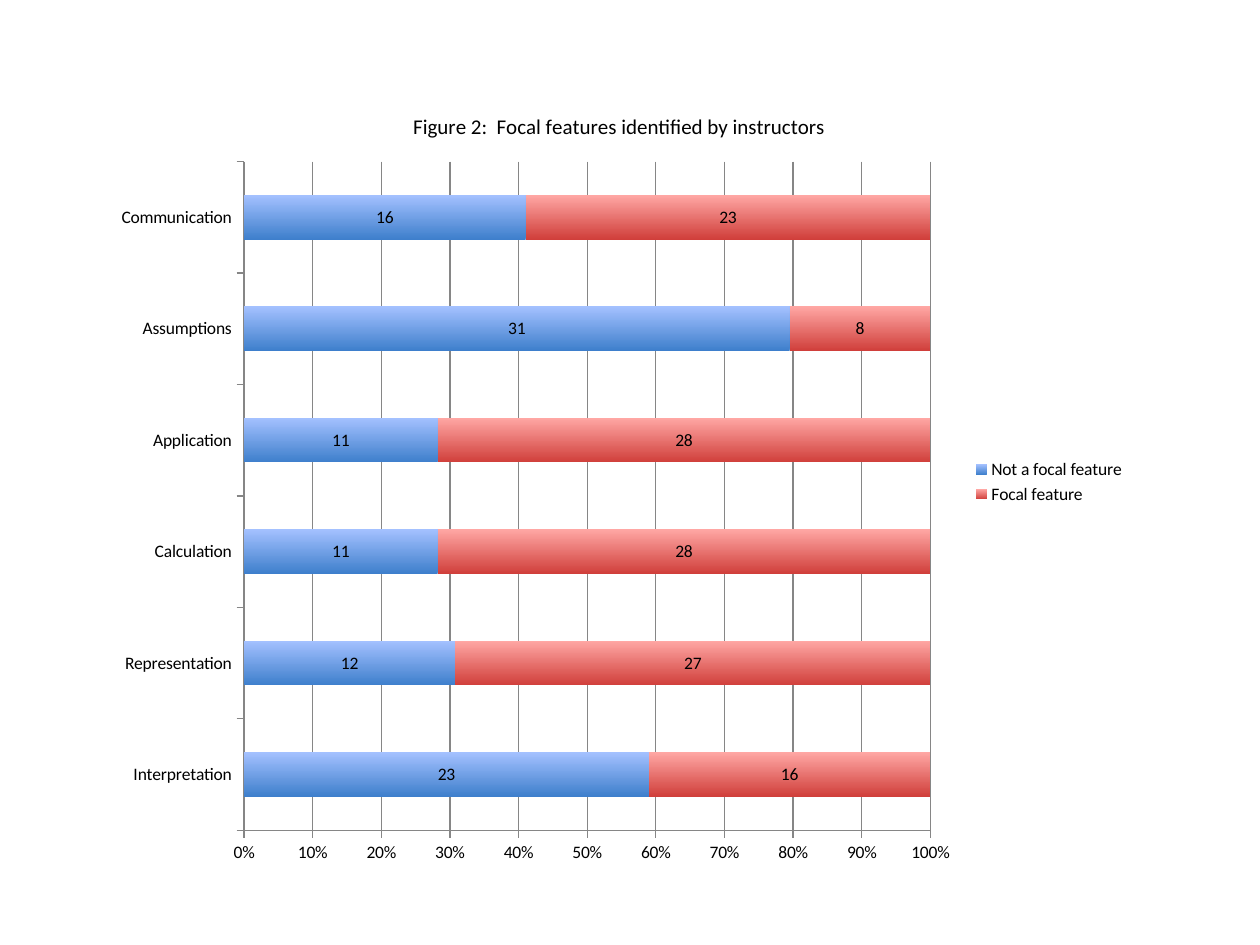
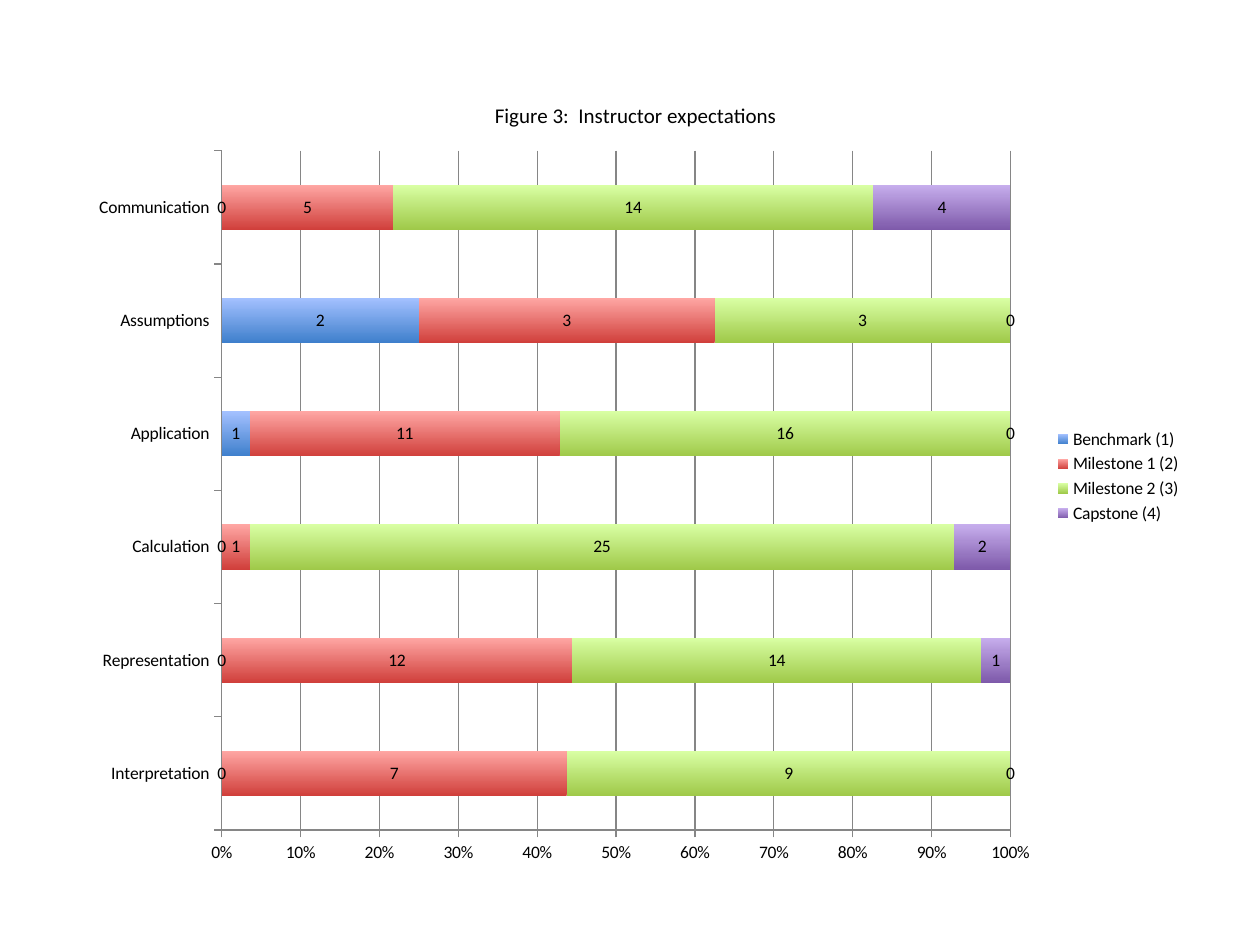
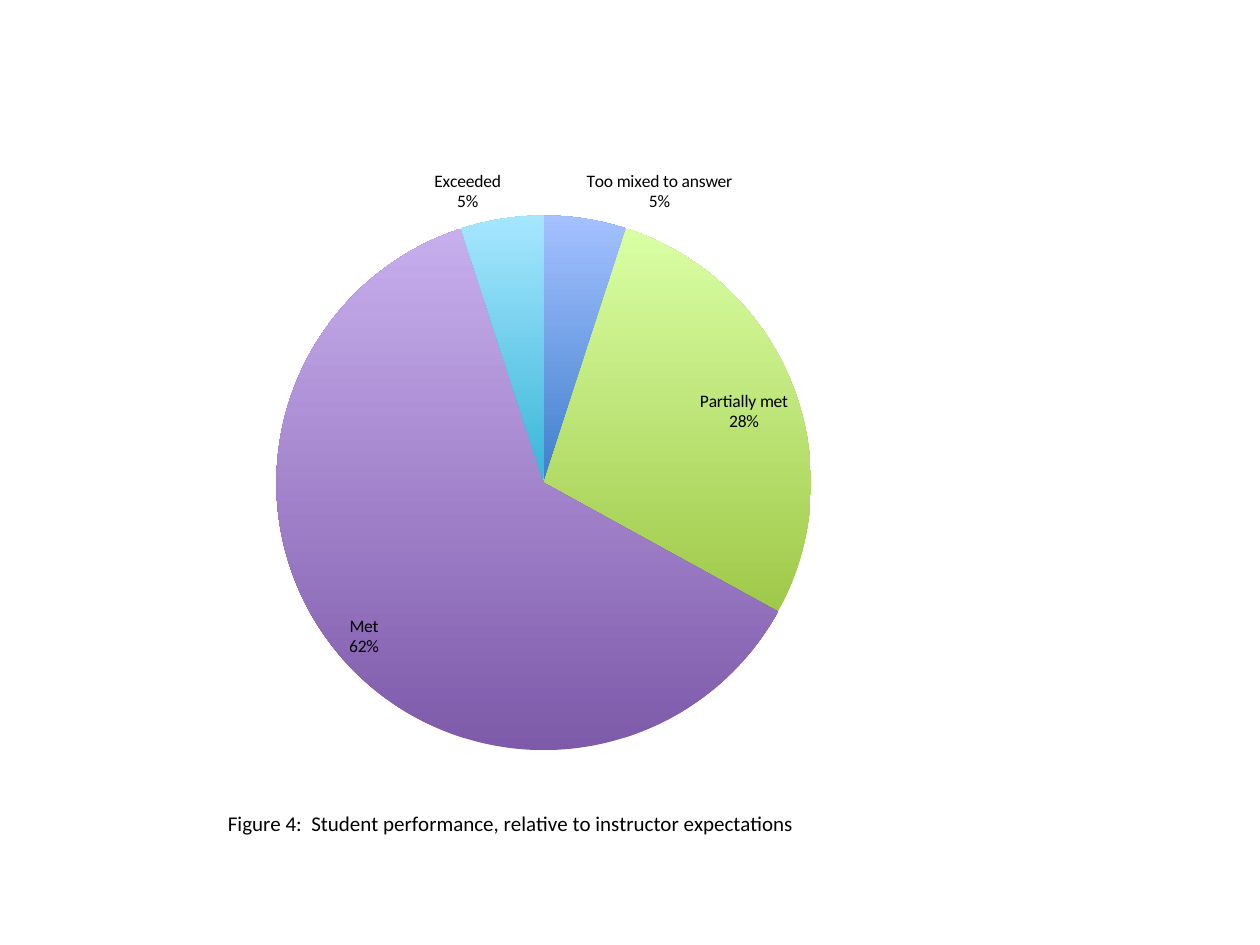
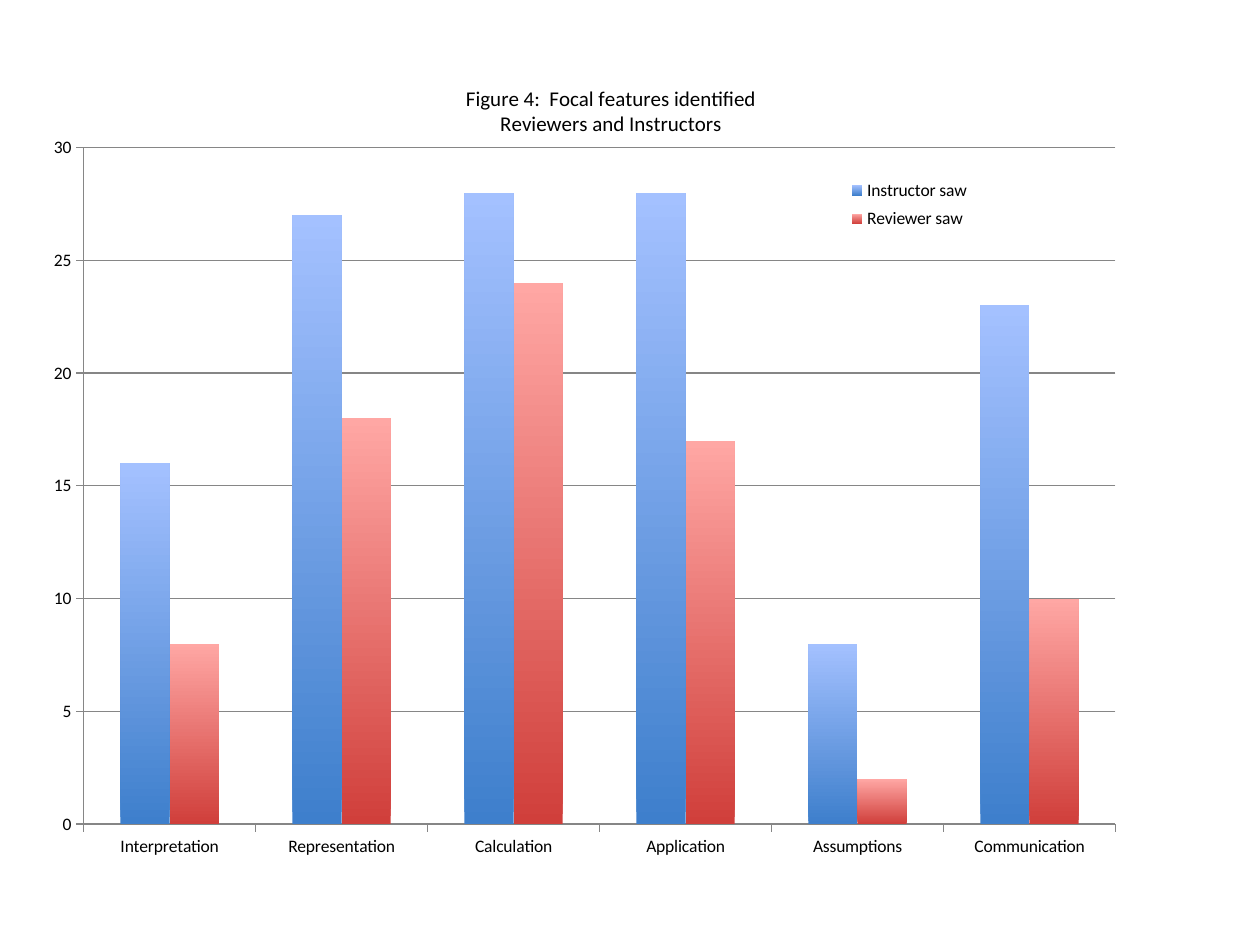
from dataclasses import dataclass
from typing import Optional

from lxml.etree import SubElement
from pptx import Presentation
from pptx.chart.chart import Chart
from pptx.chart.data import CategoryChartData
from pptx.dml.color import RGBColor
from pptx.enum.chart import XL_CHART_TYPE as ChartType
from pptx.enum.chart import XL_LABEL_POSITION as LabelPosition
from pptx.enum.chart import XL_LEGEND_POSITION as LegendPosition
from pptx.enum.chart import XL_TICK_MARK as TickMark
from pptx.oxml import parse_xml
from pptx.oxml.ns import nsdecls, qn
from pptx.util import Inches, Pt

# Shared look
BLACK = RGBColor(0x00, 0x00, 0x00)
GREY = RGBColor(0x86, 0x86, 0x86)
FONT = "Calibri"
TEXT_SIZE = Pt(10)
TITLE_SIZE = Pt(12)
GRADIENT_STYLE = 18  # accent colours with the theme's gradient fill
BLANK_LAYOUT = 6

FEATURES = ("Interpretation", "Representation", "Calculation",
            "Application", "Assumptions", "Communication")
INSTRUCTOR_SAW = (16, 27, 28, 28, 8, 23)

Box = tuple[float, ...]


@dataclass(frozen=True)
class Figure:
    title: str
    kind: ChartType
    box: Box  # left, top, width, height in inches
    categories: tuple[str, ...]
    series: dict[str, tuple[int, ...]]
    # Fractions of the chart: x, y and, where needed, width and height
    plot_area: Optional[Box] = None
    title_area: Optional[Box] = None
    legend_area: Optional[Box] = None


FIGURES = (
    Figure("Figure 2:  Focal features identified by instructors",
           ChartType.BAR_STACKED_100, (0.8, 0.68, 8.23, 6.29), FEATURES,
           {"Not a focal feature": (23, 12, 11, 11, 31, 16),
            "Focal feature": INSTRUCTOR_SAW}),
    Figure("Figure 3:  Instructor expectations",
           ChartType.BAR_STACKED_100, (0.61, 0.59, 8.87, 6.38), FEATURES,
           {"Benchmark (1)": (0, 0, 0, 1, 2, 0),
            "Milestone 1 (2)": (7, 12, 1, 11, 3, 5),
            "Milestone 2 (3)": (9, 14, 25, 16, 3, 14),
            "Capstone (4)": (0, 1, 2, 0, 0, 4)}),
    Figure("Figure 4:  Student performance, relative to instructor expectations",
           ChartType.PIE, (0.78, 0.51, 8.32, 6.39),
           ("Too mixed to answer", "Did not meet", "Partially met", "Met", "Exceeded"),
           {"Series 1": (5, 0, 28, 62, 5)},
           plot_area=(0.17, 0.17, 0.51, 0.7), title_area=(0.12, 0.92)),
    Figure("Figure 4:  Focal features identified\nReviewers and Instructors",
           ChartType.COLUMN_CLUSTERED, (0.3, 0.46, 9.1, 6.47), FEATURES,
           {"Instructor saw": INSTRUCTOR_SAW,
            "Reviewer saw": (8, 18, 24, 17, 2, 10)},
           plot_area=(0.04, 0.11, 0.9, 0.83), legend_area=(0.69, 0.14, 0.14, 0.08)),
)


def style_font(font, size: Pt = TEXT_SIZE) -> None:
    font.name, font.size, font.bold = FONT, size, False
    font.color.rgb = BLACK


def place(element, area: Optional[Box], index: int, inner: bool = False) -> None:
    """Give a chart part a manual layout, as fractions of the chart."""
    if area is None:
        return
    for layout in element.findall(qn("c:layout")):
        element.remove(layout)
    layout = parse_xml(f"<c:layout {nsdecls('c')}><c:manualLayout/></c:layout>")
    settings = [("layoutTarget", "inner")] if inner else []
    settings += [("xMode", "edge"), ("yMode", "edge"), *zip("xywh", area)]
    for name, value in settings:
        SubElement(layout[0], qn(f"c:{name}")).set("val", str(value))
    element.insert(index, layout)


def add_title(chart: Chart, figure: Figure) -> None:
    chart.has_title = True
    title = chart.chart_title
    title.text_frame.text = figure.title
    title.include_in_layout = False
    for paragraph in title.text_frame.paragraphs:
        for run in paragraph.runs:
            style_font(run.font, TITLE_SIZE)
    place(title._element, figure.title_area, 1)


def add_legend(chart: Chart, figure: Figure) -> None:
    chart.has_legend = True
    legend = chart.legend
    legend.position = LegendPosition.RIGHT
    legend.include_in_layout = False
    style_font(legend.font)
    place(legend._element, figure.legend_area, 1)


def style_axes(chart: Chart, stacked: bool) -> None:
    for axis in (chart.category_axis, chart.value_axis):
        axis.major_tick_mark, axis.minor_tick_mark = TickMark.OUTSIDE, TickMark.NONE
        axis.format.line.color.rgb = GREY
        style_font(axis.tick_labels.font)
    value_axis = chart.value_axis
    value_axis.has_major_gridlines = True
    value_axis.major_gridlines.format.line.color.rgb = GREY
    value_axis.minimum_scale = 0
    value_axis.maximum_scale, value_axis.major_unit = (1, 0.1) if stacked else (30, 5)
    labels = value_axis.tick_labels
    labels.number_format = "0%" if stacked else "General"
    labels.number_format_is_linked = False


def hide_label(labels, point: int) -> None:
    labels._element.insert(0, parse_xml(
        f'<c:dLbl {nsdecls("c")}><c:idx val="{point}"/><c:delete val="1"/></c:dLbl>'))


def label_pie(chart: Chart) -> None:
    series = chart.plots[0].series[0]
    labels = series.data_labels
    labels.show_category_name = labels.show_percentage = True
    labels.show_value = False
    labels.number_format, labels.number_format_is_linked = "0%", False
    labels.position = LabelPosition.BEST_FIT
    style_font(labels.font)
    for point, value in enumerate(series.values):
        if value == 0:
            hide_label(labels, point)


def label_bars(chart: Chart) -> None:
    for series in chart.plots[0].series:
        series.data_labels.show_value = True
        style_font(series.data_labels.font)


def add_figure(presentation: Presentation, figure: Figure) -> None:
    slide = presentation.slides.add_slide(presentation.slide_layouts[BLANK_LAYOUT])
    data = CategoryChartData()
    data.categories = figure.categories
    for name, values in figure.series.items():
        data.add_series(name, values)
    chart = slide.shapes.add_chart(
        figure.kind, *(Inches(length) for length in figure.box), data).chart
    chart.chart_style = GRADIENT_STYLE
    style_font(chart.font)
    add_title(chart, figure)
    place(chart._chartSpace.chart.plotArea, figure.plot_area, 0, inner=True)

    plot = chart.plots[0]
    if figure.kind == ChartType.PIE:
        chart.has_legend = False
        plot.vary_by_categories = True
        label_pie(chart)
        return
    stacked = figure.kind == ChartType.BAR_STACKED_100
    plot.vary_by_categories = False
    plot.gap_width, plot.overlap = 150, 100 if stacked else 0
    add_legend(chart, figure)
    style_axes(chart, stacked)
    if stacked:
        label_bars(chart)


def main() -> None:
    presentation = Presentation()
    presentation.slide_width, presentation.slide_height = Inches(10), Inches(7.5)
    for figure in FIGURES:
        add_figure(presentation, figure)
    presentation.save("out.pptx")


if __name__ == "__main__":
    main()
